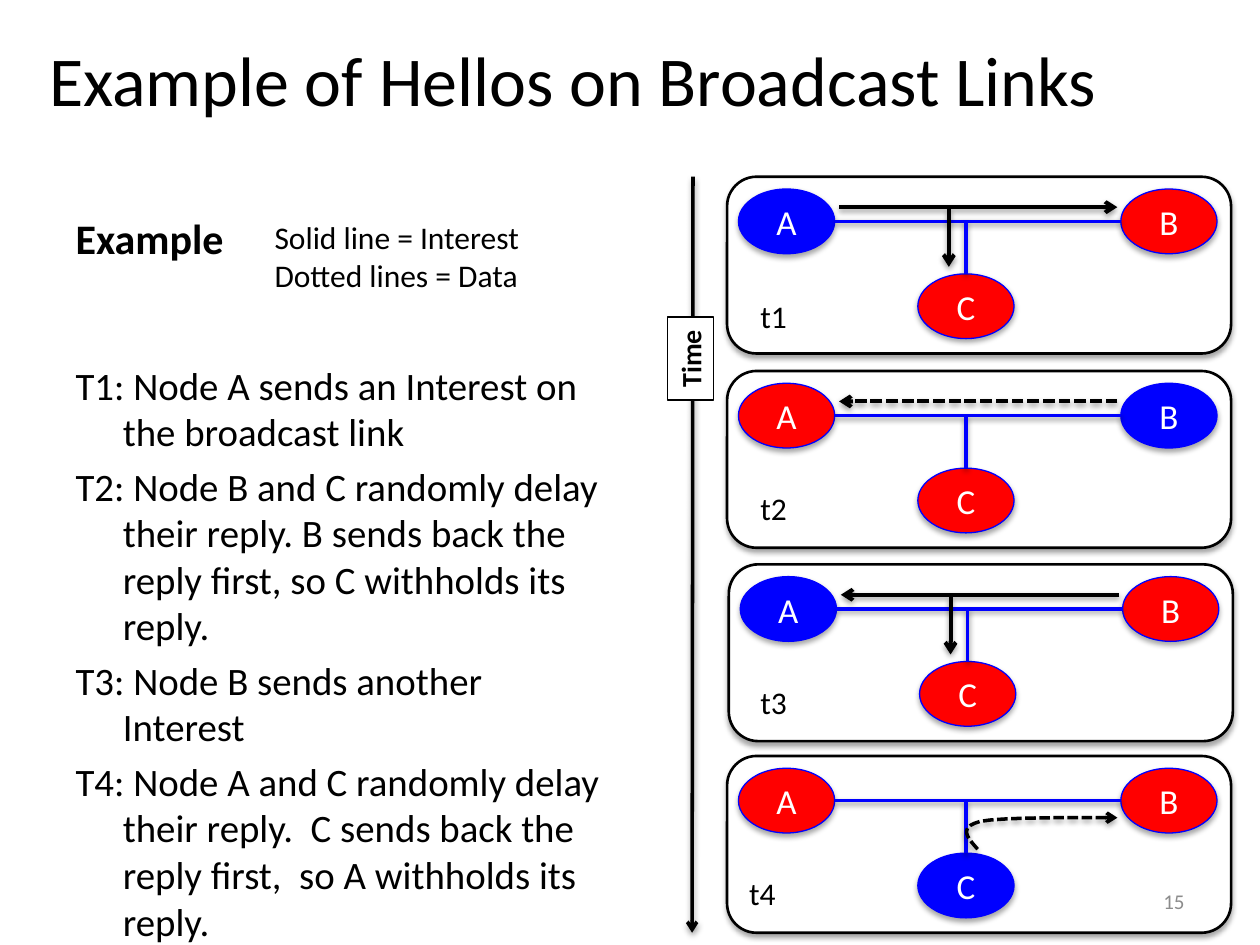
from lxml.etree import SubElement
from pptx import Presentation
from pptx.dml.color import RGBColor
from pptx.enum.dml import MSO_LINE
from pptx.enum.shapes import MSO_CONNECTOR, MSO_SHAPE
from pptx.enum.text import MSO_ANCHOR, MSO_AUTO_SIZE, PP_ALIGN
from pptx.oxml.ns import qn
from pptx.util import Pt

FONT = "Calibri"
HUES = {"black": "000000", "white": "FFFFFF", "blue": "0000FF",
        "red": "FF0000", "gray": "8C8C8C"}

TITLE = "Example of Hellos on Broadcast Links"
HEAD = "Example"
STEPS = [
    "T1: Node A sends an Interest on the broadcast link",
    "T2: Node B and C randomly delay their reply. B sends back the reply first, so C withholds its reply.",
    "T3: Node B sends another Interest",
    "T4: Node A and C randomly delay their reply.  C sends back the reply first,  so A withholds its reply.",
]
KEY = ["Solid line = Interest", "Dotted lines = Data"]
PANELS = [
    {"name": "t1", "at": (415.5, 101), "tag": (427.5, 166.3), "from": "A", "flow": (64, 223), "fork": True},
    {"name": "t2", "at": (415.5, 212), "tag": (427.5, 275.8), "from": "B", "flow": (223, 64), "dash": True},
    {"name": "t3", "at": (416.5, 322.5), "tag": (427.5, 386.6), "from": "B", "lit": "A", "flow": (223, 64), "fork": True},
    {"name": "t4", "at": (415.5, 432), "tag": (421, 496), "from": "C", "curve": True},
]
NODES = {"A": (6.5, 7), "B": (225, 7), "C": (109, 55.5)}
WIDE, HIGH = 55, 37
CURVE = [
    [(143.2, 53.3), (137.5, 46.8), (131.7, 40.8), (144.7, 37.4)],
    [(144.7, 37.4), (158.3, 34.5), (223.1, 35.3), (223.1, 35.3)],
]

deck = Presentation()
deck.slide_width, deck.slide_height = Pt(720), Pt(540)
slide = deck.slides.add_slide(deck.slide_layouts[4])
shapes = slide.shapes


def hue(name):
    return RGBColor.from_string(HUES[name])


def place(shape, *box):
    shape.left, shape.top, shape.width, shape.height = map(Pt, box)


def write(shape, lines, size, color="black", bold=False, align=None):
    frame = shape.text_frame
    frame.text = "\n".join(lines)
    for para in frame.paragraphs:
        font = para.font
        font.name, font.size, font.bold = FONT, Pt(size), bold
        font.color.rgb = hue(color)
        if align is not None:
            para.alignment = align
    return frame


def label(lines, box, size, **style):
    shape = shapes.add_textbox(*map(Pt, box))
    frame = write(shape, lines, size, **style)
    frame.word_wrap = True
    return shape


def block(kind, box, fill, edge, width):
    shape = shapes.add_shape(kind, *map(Pt, box))
    shape.fill.solid()
    shape.fill.fore_color.rgb = hue(fill)
    shape.line.color.rgb = hue(edge)
    shape.line.width = Pt(width)
    return shape


def stroke(shape, color, width, tip=False, dash=False):
    shape.line.color.rgb = hue(color)
    shape.line.width = Pt(width)
    if dash:
        shape.line.dash_style = MSO_LINE.SQUARE_DOT
    if tip:
        SubElement(shape.line._get_or_add_ln(), qn("a:tailEnd"), type="arrow")


def link(x1, y1, x2, y2, color="black", width=2.25, **style):
    line = shapes.add_connector(MSO_CONNECTOR.STRAIGHT, *map(Pt, (x1, y1, x2, y2)))
    stroke(line, color, width, **style)


def bend(points, t):
    weights = ((1 - t) ** 3, 3 * t * (1 - t) ** 2, 3 * t * t * (1 - t), t ** 3)
    return [sum(w * p[axis] for w, p in zip(weights, points)) for axis in (0, 1)]


def panel(data):
    x, y = data["at"]
    block(MSO_SHAPE.ROUNDED_RECTANGLE, (x, y, 288, 101), "white", "black", 1.5)
    lit = data.get("lit", data["from"])
    for name, (dx, dy) in NODES.items():
        fill = "blue" if name == lit else "red"
        node = block(MSO_SHAPE.OVAL, (x + dx, y + dy, WIDE, HIGH), fill, "blue", 0.75)
        write(node, [name], 20, "white", align=PP_ALIGN.CENTER)
    wire, stem = y + 25.5, x + NODES["C"][0] + WIDE / 2
    link(x + NODES["A"][0] + WIDE, wire, x + NODES["B"][0], wire, "blue", 2)
    link(stem, y + NODES["C"][1], stem, wire, "blue", 2)
    if "flow" in data:
        start, end = data["flow"]
        link(x + start, y + 17.4, x + end, y + 17.4, tip=True, dash=data.get("dash", False))
    if data.get("fork"):
        link(x + 126.7, y + 18.5, x + 126.7, y + 51.5, tip=True)
    if data.get("curve"):
        spots = [bend(part, step / 10) for part in CURVE for step in range(1, 11)]
        spots = [(Pt(x + dx), Pt(y + dy)) for dx, dy in spots]
        dx, dy = CURVE[0][0]
        path = shapes.build_freeform(Pt(x + dx), Pt(y + dy))
        path.add_line_segments(spots, close=False)
        reply = path.convert_to_shape()
        reply.fill.background()
        stroke(reply, "black", 2, tip=True, dash=True)


title = shapes.title
place(title, 13, 0, 628.5, 90)
write(title, [TITLE], 40, align=PP_ALIGN.CENTER).vertical_anchor = MSO_ANCHOR.MIDDLE

holders = {item.placeholder_format.idx: item for item in slide.placeholders}
for idx in (3, 4):
    item = holders[idx].element
    item.getparent().remove(item)

head, body = holders[1], holders[2]
place(head, 36, 103.7, 318, 50.4)
write(head, [HEAD], 24, bold=True).vertical_anchor = MSO_ANCHOR.BOTTOM

place(body, 36, 171.4, 318, 311)
frame = write(body, STEPS, 22.2)
frame.auto_size = MSO_AUTO_SIZE.NONE
frame.margin_top = Pt(35)
for para in frame.paragraphs:
    para.space_before = Pt(4.4)
    props = para._p.get_or_add_pPr()
    props.set("marL", str(Pt(27)))
    props.set("indent", str(-Pt(27)))
    SubElement(props, qn("a:buNone"))

link(396, 101, 395.5, 533, width=2, tip=True)
time = label(["Time"], (370.8, 191.5, 47.5, 26.6), 16, bold=True)
time.text_frame.word_wrap = False
time.rotation = 270
time.fill.solid()
time.fill.fore_color.rgb = hue("white")
time.line.color.rgb = hue("black")
time.line.width = Pt(0.75)

for data in PANELS:
    panel(data)
for data in PANELS:
    label([data["name"]], (*data["tag"], 36, 29), 18)

label(KEY, (149.8, 121, 174, 51), 18)
page = label(["15"], (516, 500.5, 168, 28.8), 12, color="gray", align=PP_ALIGN.RIGHT)
page.text_frame.vertical_anchor = MSO_ANCHOR.MIDDLE

deck.save("out.pptx")
